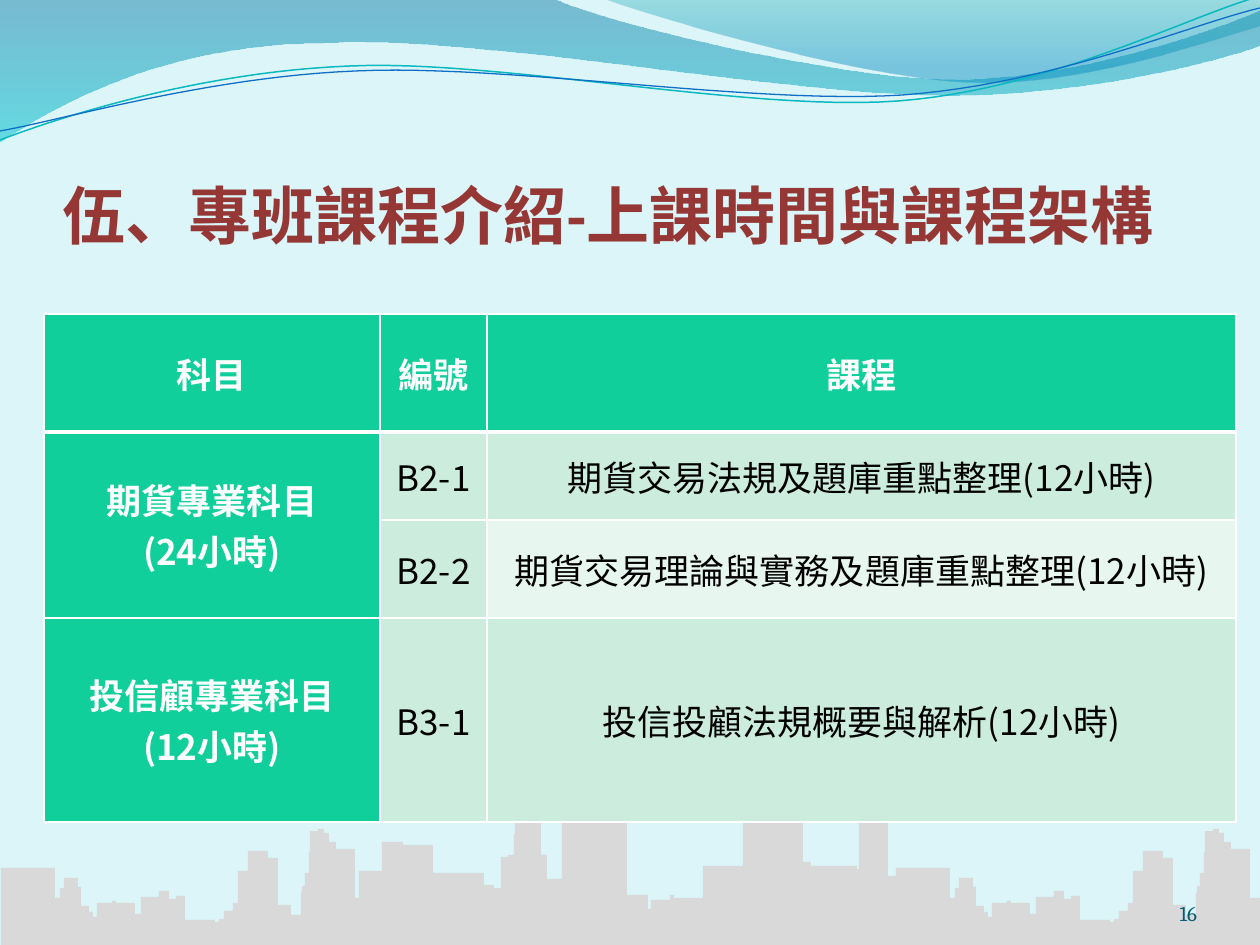
from lxml import etree
from pptx import Presentation
from pptx import util as u
from pptx.dml.color import RGBColor
from pptx.enum import text
from pptx.oxml import ns

COLORS = {
    "background": "DBF5F9", "title": "953735", "number": "045D75",
    "deep blue": "0074A1", "cyan": "00C6CF", "teal": "00A1A9", "sky": "008BBF",
    "teal line": "0AB8BF", "blue line": "0F6FC6", "skyline": "D9D9D9",
    "header": "10CF9B", "band": "CCEDDE", "light band": "E7F6EF",
    "white": "FFFFFF", "black": "000000",
}
RGB = {name: RGBColor.from_string(value) for name, value in COLORS.items()}


def px(length):
    return u.Emu(round(length * 914400 / 126))


def draw_outline(start, segments, close):
    """Draw lines (one point) and cubic curves (three points) as one outline."""
    points = [start]
    for segment in segments:
        if len(segment) == 1:
            points.append(segment[0])
            continue
        controls = (points[-1], *segment)
        for step in range(1, 25):
            t = step / 24
            weights = ((1 - t) ** 3, 3 * t * (1 - t) ** 2, 3 * t * t * (1 - t), t ** 3)
            points.append(tuple(sum(w * c[axis] for w, c in zip(weights, controls))
                                for axis in (0, 1)))
    corners = [(px(x), px(y)) for x, y in points]
    builder = slide.shapes.build_freeform(*corners[0])
    builder.add_line_segments(corners[1:], close=close)
    outline = builder.convert_to_shape()
    outline.shadow.inherit = False
    return outline


prs = Presentation()
prs.slide_width, prs.slide_height = px(1260), px(945)
slide = prs.slides.add_slide(prs.slide_layouts[6])
slide.background.fill.solid()
slide.background.fill.fore_color.rgb = RGB["background"]

# Translucent waves: start, segments, gradient stops (position, colour, opacity)
waves = [
    ((0, -1),
     [[(554, -1)],
      [(600, 21), (837, 79), (955, 79)], [(1075, 79), (1207, 33), (1260, 11)],
      [(1261, 45)],
      [(1239, 55), (1096, 96), (940, 95)], [(784, 95), (481, 35), (324, 43)],
      [(163, 44), (58, 105), (-1, 142)]],
     [(0, "deep blue", 45), (1, "cyan", 55)]),
    ((604, -1),
     [[(641, 14), (859, 78), (969, 82)], [(1079, 87), (1211, 40), (1260, 26)],
      [(1260, 0)]],
     [(0, "teal", 30), (0.8, "sky", 45)]),
]
for start, segments, stops in waves:
    wave = draw_outline(start, segments, True)
    wave.line.fill.background()
    wave.fill.gradient()
    wave.fill.gradient_angle = 270
    for stop, (position, color, opacity) in zip(wave.fill.gradient_stops, stops):
        stop.position = position
        stop.color.rgb = RGB[color]
    for tint, (_, _, opacity) in zip(wave._element.spPr.iter(ns.qn("a:srgbClr")), stops):
        etree.SubElement(tint, ns.qn("a:alpha"), val=str(opacity * 1000))

# Thin lines along the waves
ripples = [
    ((0, 140), [[(60, 117), (199, 72), (349, 66)], [(498, 59), (747, 112), (898, 101)],
                [(1050, 89), (1182, 19), (1257, -3)]], "teal line", 0.85),
    ((0, 131), [[(59, 121), (207, 77), (356, 71)], [(508, 64), (752, 105), (903, 95)],
                [(1053, 84), (1186, 26), (1260, 8)]], "blue line", 0.75),
]
for start, segments, color, weight in ripples:
    ripple = draw_outline(start, segments, False)
    ripple.fill.background()
    ripple.line.color.rgb = RGB[color]
    ripple.line.width = u.Pt(weight)

# Skyline: (left edge, roof height); the outer block stands at both ends
outer_block = [
    (1, 868), (55, 898), (60, 888), (64, 878), (78, 887), (81, 906), (89, 912),
    (93, 917), (97, 903), (112, 901), (116, 903), (135, 914), (141, 897), (159, 891),
    (169, 899), (176, 896), (185, 920), (215, 922), (219, 919), (224, 911), (233, 903),
    (238, 871), (248, 851), (268, 858), (278, 905), (291, 915), (301, 893), (302, 886),
    (305, 873), (309, 852), (310, 831), (318, 829), (324, 833), (329, 842), (336, 849),
    (355, 898),
]
inner_block = [
    (359, 871), (382, 842), (403, 845), (433, 873), (484, 885), (494, 888), (501, 857),
    (508, 855), (514, 834), (515, 822), (541, 855), (547, 879), (562, 777), (563, 764),
    (582, 760), (592, 764), (610, 769), (622, 782), (627, 895), (648, 909), (651, 900),
    (670, 895), (674, 898), (703, 866), (743, 775), (803, 862), (811, 866), (857, 869),
    (859, 823), (864, 816), (885, 823), (888, 876),
]
roofs = outer_block + inner_block + [(x + 895, y) for x, y in outer_block]
steps, ground = [], 945
height = ground
for x, roof in roofs + [(1260, ground)]:
    steps += [[(x, height)], [(x, roof)]]
    height = roof
skyline = draw_outline((0, ground), steps, True)
skyline.fill.solid()
skyline.fill.fore_color.rgb = RGB["skyline"]
skyline.line.fill.background()

# Title and page number
captions = [
    ("伍、專班課程介紹-上課時間與課程架構", (63, 126, 1123, 126), 6,
     "Calibri", 36, "title", True, text.PP_ALIGN.LEFT),
    ("16", (1092, 876, 105, 50), 0,
     "Cambria", 12, "number", False, text.PP_ALIGN.RIGHT),
]
for words, place, top_inset, font_name, size, color, bold, align in captions:
    frame = slide.shapes.add_textbox(*map(px, place)).text_frame
    frame.word_wrap = True
    frame.vertical_anchor = text.MSO_ANCHOR.BOTTOM
    frame.margin_left = frame.margin_right = frame.margin_bottom = 0
    frame.margin_top = px(top_inset)
    frame.text = words
    frame.paragraphs[0].alignment = align
    font = frame.paragraphs[0].runs[0].font
    font.name, font.size, font.bold = font_name, u.Pt(size), bold
    font.color.rgb = RGB[color]

# Course table
courses = [
    ["科目", "編號", "課程"],
    ["期貨專業科目\n(24小時)", "B2-1", "期貨交易法規及題庫重點整理(12小時)"],
    ["", "B2-2", "期貨交易理論與實務及題庫重點整理(12小時)"],
    ["投信顧專業科目\n(12小時)", "B3-1", "投信投顧法規概要與解析(12小時)"],
]
widths, heights = [336, 107, 749], [118, 88, 98, 204]
table = slide.shapes.add_table(4, 3, px(44), px(314), px(sum(widths)), px(sum(heights))).table
table.horz_banding = False
for column, width in zip(table.columns, widths):
    column.width = px(width)
for row, height in zip(table.rows, heights):
    row.height = px(height)
table.cell(1, 0).merge(table.cell(2, 0))

for r, row in enumerate(courses):
    for c, words in enumerate(row):
        cell = table.cell(r, c)
        heading = r == 0 or c == 0
        cell.vertical_anchor = text.MSO_ANCHOR.MIDDLE
        cell.margin_left = cell.margin_right = px(9)
        cell.margin_top = cell.margin_bottom = 0

        # White borders, thick below the header row
        cell_properties = cell._tc.get_or_add_tcPr()
        for side in "LRTB":
            thick = (r, side) in ((0, "B"), (1, "T"))
            border = etree.SubElement(cell_properties, ns.qn(f"a:ln{side}"),
                                      w=str(u.Pt(3 if thick else 1)))
            paint = etree.SubElement(border, ns.qn("a:solidFill"))
            etree.SubElement(paint, ns.qn("a:srgbClr"), val=COLORS["white"])
        cell.fill.solid()
        fill = "header" if heading else "light band" if (r, c) == (2, 2) else "band"
        cell.fill.fore_color.rgb = RGB[fill]

        if not words:
            continue
        cell.text_frame.text = words
        for paragraph in cell.text_frame.paragraphs:
            paragraph.alignment = text.PP_ALIGN.CENTER
            font = paragraph.runs[0].font
            font.name, font.size, font.bold = "Noto Sans CJK SC", u.Pt(20), heading
            font.color.rgb = RGB["white" if heading else "black"]

prs.save("out.pptx")
